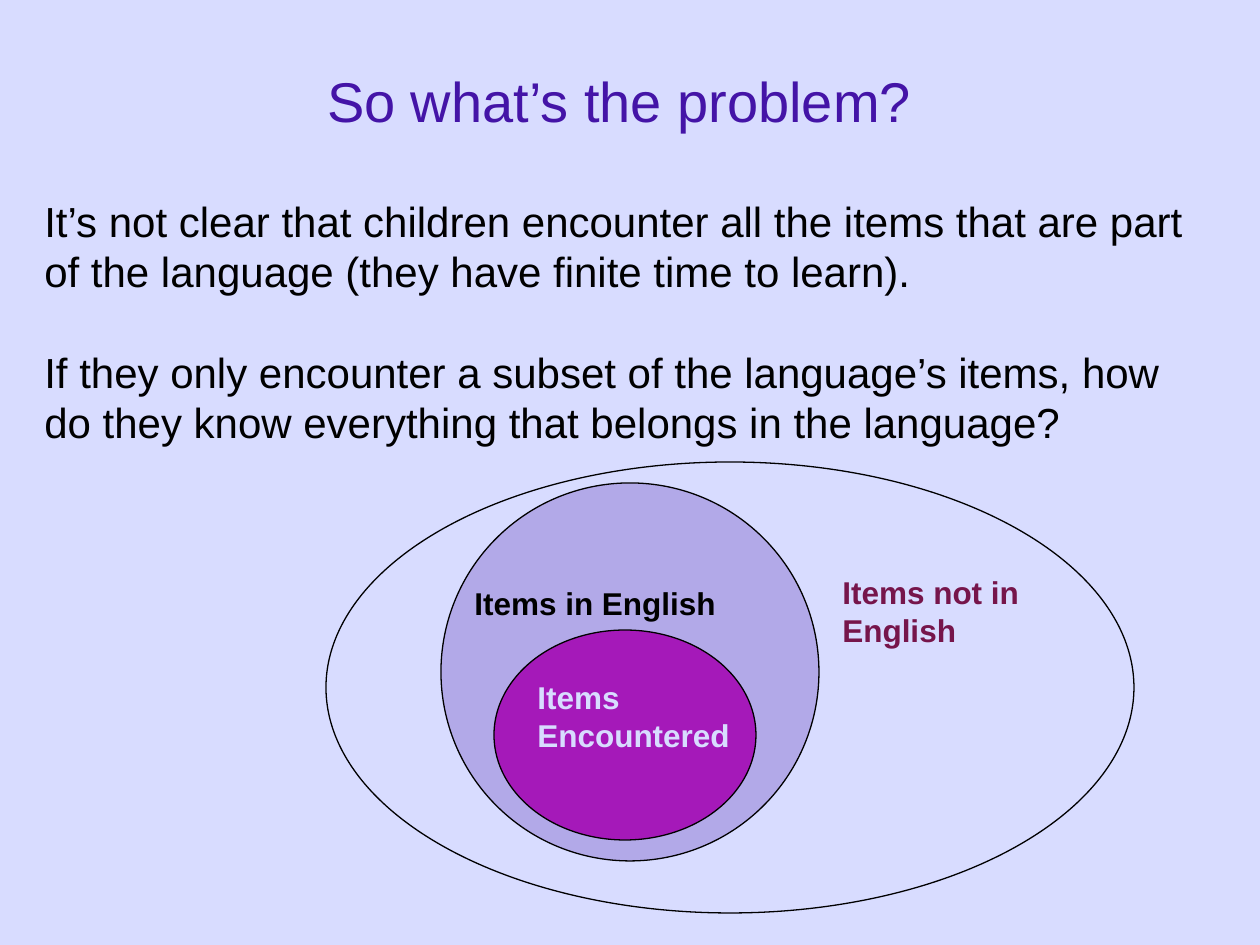
from pptx import Presentation
from pptx.dml.color import RGBColor
from pptx.enum.shapes import MSO_SHAPE
from pptx.enum.text import MSO_ANCHOR, PP_ALIGN
from pptx.oxml.ns import qn
from pptx.util import Emu, Pt
from lxml import etree

OVAL = MSO_SHAPE.OVAL
TOP, MIDDLE = MSO_ANCHOR.TOP, MSO_ANCHOR.MIDDLE
LEFT, CENTER = PP_ALIGN.LEFT, PP_ALIGN.CENTER
PX = 914400 // 126
BLACK, LAVENDER, INDIGO, PURPLE, MAROON = "000000", "D8DCFF", "4414A7", "A519B9", "76154B"


def px(*lengths):
    return [Emu(n * PX) for n in lengths]


def rgb(color):
    return RGBColor.from_string(color)


def add_text(p, text, size=18, color=BLACK, bold=False, font="Arial"):
    r = p.add_run()
    r.text = text
    r.font.name, r.font.size, r.font.bold = font, Pt(size), bold
    r.font.color.rgb = rgb(color)


class SlideBuilder:
    """Draws styled elements on one slide, measured in px."""

    def __init__(self, prs, background):
        self.s = prs.slides.add_slide(prs.slide_layouts[6])
        self.line_color, self.line_width = BLACK, Pt(0.75)
        fill = self.s.background.fill
        fill.solid()
        fill.fore_color.rgb = rgb(background)

    def text(self, box, paragraphs, anchor=TOP, align=LEFT, gap=0, wrap=True, **style):
        tf = self.s.shapes.add_textbox(*px(*box)).text_frame
        tf.word_wrap, tf.vertical_anchor = wrap, anchor
        for i, text in enumerate(paragraphs):
            p = tf.add_paragraph() if i else tf.paragraphs[0]
            p.alignment = align
            p.space_before = Pt(gap if i else 0)
            add_text(p, text, **style)

    def label(self, box, text, color, wrap=True):
        self.text(box, [text], color=color, bold=True, wrap=wrap)

    def ellipse(self, box, color=None, opacity=100):
        sp = self.s.shapes.add_shape(OVAL, *px(*box))
        sp.shadow.inherit = False
        sp.line.color.rgb, sp.line.width = rgb(self.line_color), self.line_width
        if color is None:
            sp.fill.background()
            return
        sp.fill.solid()
        sp.fill.fore_color.rgb = rgb(color)
        if opacity < 100:
            clr = sp._element.spPr.find(qn("a:solidFill")).find(qn("a:srgbClr"))
            etree.SubElement(clr, qn("a:alpha"), val=str(opacity * 1000))


def main():
    prs = Presentation()
    prs.slide_width, prs.slide_height = px(1260, 945)
    slide = SlideBuilder(prs, LAVENDER)
    slide.text((84, 21, 1071, 158), ["So what’s the problem?"],
               anchor=MIDDLE, align=CENTER, size=32, color=INDIGO)
    slide.text((32, 189, 1187, 315), [
        "It’s not clear that children encounter all the items that are part "
        "of the language (they have finite time to learn).",
        "If they only encounter a subset of the language’s items, how do they "
        "know everything that belongs in the language?",
    ], gap=28.8, size=24)
    slide.ellipse((441, 483, 378, 378), INDIGO, opacity=25)
    slide.ellipse((494, 630, 262, 210), PURPLE)
    slide.label((525, 672, 221, 88), "Items Encountered", LAVENDER)
    slide.label((462, 578, 267, 50), "Items in English", BLACK, wrap=False)
    slide.ellipse((326, 462, 808, 451))
    slide.label((830, 567, 221, 88), "Items not in English", MAROON)
    prs.save("out.pptx")


if __name__ == "__main__":
    main()
